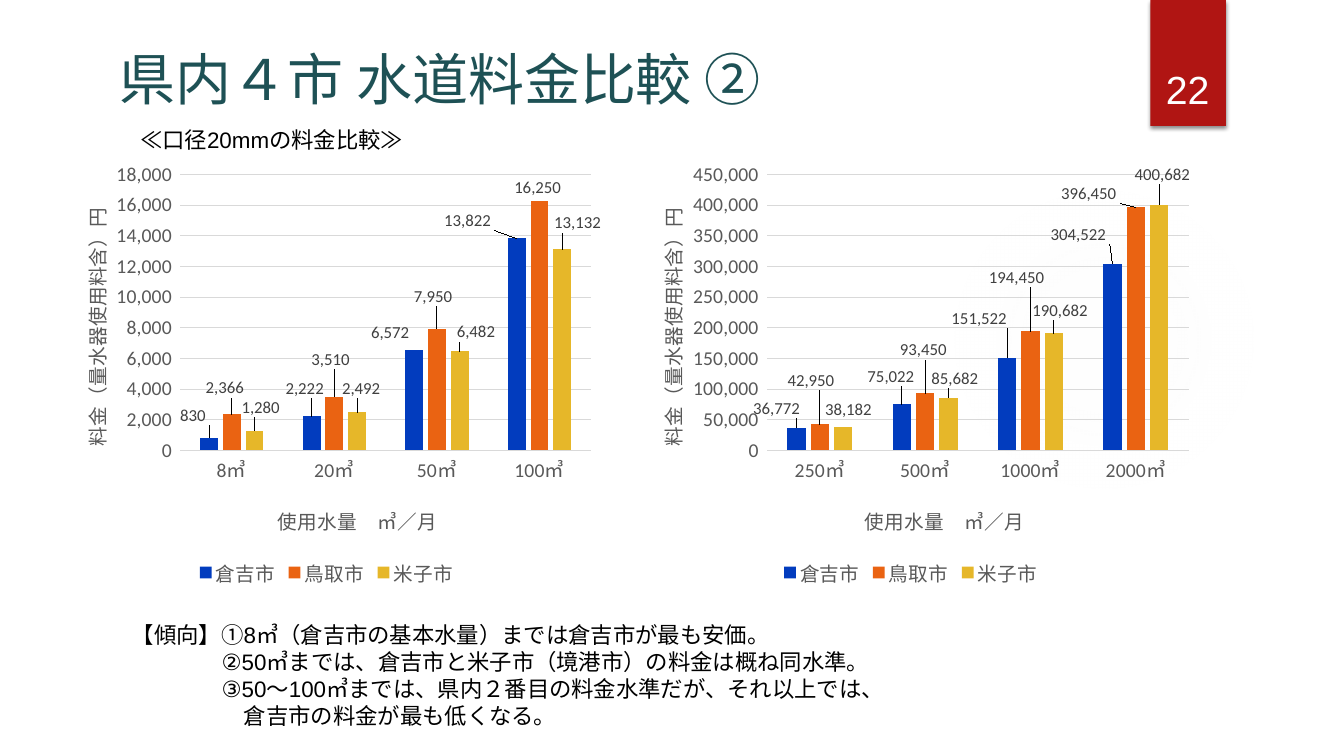
from collections import namedtuple
from dataclasses import dataclass

from pptx import Presentation
from pptx.chart.data import CategoryChartData
from pptx.dml.color import RGBColor
from pptx.enum.chart import XL_CHART_TYPE, XL_LABEL_POSITION, XL_LEGEND_POSITION, XL_TICK_MARK
from pptx.enum.shapes import MSO_SHAPE
from pptx.enum.text import MSO_ANCHOR, PP_ALIGN
from pptx.oxml import parse_xml
from pptx.oxml.ns import nsdecls, qn
from pptx.util import Inches, Pt

Box = namedtuple("Box", "left top width height")
Panel = namedtuple("Panel", "cats values nudges top step plot across up")


@dataclass(frozen=True)
class Theme:
    """Colours, fonts and type sizes of the slide."""
    title: str = "1E5155"
    ink: str = "000000"
    paper: str = "FFFFFF"
    flag: str = "B01513"
    glow: str = "F3F3F3"
    axis: str = "595959"
    label: str = "404040"
    grid: str = "D9D9D9"
    bars: tuple = ("023CBE", "EA6312", "E6B729")
    head: str = "Calibri"
    body: str = "Arial"
    big: int = 40
    page: int = 28
    text: int = 16
    tick: int = 14
    small: int = 12


THEME = Theme()
FORMAT = r"#,##0_);[Red]\(#,##0\)"
CITIES = ("倉吉市", "鳥取市", "米子市")
NOTES = (
    (0, "【傾向】①8㎥（倉吉市の基本水量）までは倉吉市が最も安価。"),
    (0.89, "②50㎥までは、倉吉市と米子市（境港市）の料金は概ね同水準。"),
    (0.89, "③50～100㎥までは、県内２番目の料金水準だが、それ以上では、"),
    (1.11, "倉吉市の料金が最も低くなる。"),
)
SMALL = Panel(
    ("8㎥", "20㎥", "50㎥", "100㎥"),
    ((830, 2222, 6572, 13822), (2366, 3510, 7950, 16250), (1280, 2492, 6482, 13132)),
    (((-0.14, -0.08), (-0.05, -0.14), (-0.22, -0.03), (-0.47, -0.04)),
     ((-0.05, -0.12), (-0.02, -0.23), (-0.02, -0.18), (0, 0)),
     ((0.08, -0.09), (0.06, -0.1), (0.18, -0.05), (0.17, -0.12))),
    18000, 2000, Box(1.32, 0.21, 4.07, 2.74), (2.25, 3.45), (0.29, 0.5))
LARGE = Panel(
    ("250㎥", "500㎥", "1000㎥", "2000㎥"),
    ((36772, 75022, 151522, 304522), (42950, 93450, 194450, 396450),
     (38182, 85682, 190682, 400682)),
    (((-0.18, -0.05), (-0.09, -0.14), (-0.26, -0.25), (-0.32, -0.15)),
     ((-0.07, -0.29), (0, -0.29), (-0.12, -0.39), (-0.45, 0)),
     ((0.07, -0.03), (0.08, -0.05), (0.08, -0.09), (0.05, -0.16))),
    450000, 50000, Box(1.43, 0.21, 4.18, 2.74), (2.36, 3.45), (0.29, 0.5))


def style(font, size, color, name):
    """Set the look of a font."""
    font.size, font.name, font.bold = Pt(size), name, False
    font.color.rgb = RGBColor.from_string(color)


def write(slide, box, lines, size, color, name, align=PP_ALIGN.LEFT):
    """Add bottom-anchored text from pairs of indent and wording."""
    frame = slide.shapes.add_textbox(*map(Inches, box)).text_frame
    frame.word_wrap = True
    frame.vertical_anchor = MSO_ANCHOR.BOTTOM
    frame.text = "\n".join(words for _, words in lines)
    for para, (indent, _) in zip(frame.paragraphs, lines):
        para.alignment = align
        if indent:
            para._p.get_or_add_pPr().set("marL", str(Inches(indent)))
        for run in para.runs:
            style(run.font, size, color, name)


def solid(slide, kind, box, color):
    """Add a filled shape with no outline."""
    shape = slide.shapes.add_shape(kind, *map(Inches, box))
    shape.shadow.inherit = False
    shape.fill.solid()
    shape.fill.fore_color.rgb = RGBColor.from_string(color)
    shape.line.fill.background()
    return shape


def glow(slide, box):
    """Add the faint round glow."""
    props = solid(slide, MSO_SHAPE.OVAL, box, THEME.glow)._element.spPr
    stops = "".join(
        f'<a:gs pos="{pos}000"><a:srgbClr val="{THEME.glow}"><a:alpha val="{alpha}000"/>'
        "</a:srgbClr></a:gs>" for pos, alpha in ((0, 7), (36, 6), (69, 0)))
    props.replace(props.find(qn("a:solidFill")), parse_xml(
        f'<a:gradFill {nsdecls("a")}><a:gsLst>{stops}</a:gsLst><a:path path="circle">'
        '<a:fillToRect l="50000" t="50000" r="50000" b="50000"/></a:path></a:gradFill>'))


def flag(slide, box, number):
    """Add the red page flag with its number."""
    shape = solid(slide, MSO_SHAPE.RECTANGLE, box, THEME.flag)
    shape._element.spPr.find(qn("a:effectLst")).append(parse_xml(
        f'<a:outerShdw {nsdecls("a")} blurRad="{Pt(3)}" dist="{Pt(2)}" dir="5400000">'
        '<a:srgbClr val="000000"><a:alpha val="45000"/></a:srgbClr></a:outerShdw>'))
    write(slide, Box(box.left - 0.09, box.top + 0.32, 0.92, 0.84), [(0, number)],
          THEME.page, THEME.paper, THEME.body, PP_ALIGN.CENTER)


def place(node, index, box, spot):
    """Give a chart part a manual layout, in inches within the chart box."""
    old = node.find(qn("c:layout"))
    if old is not None:
        node.remove(old)
    parts = [("x", spot[0] / box.width), ("y", spot[1] / box.height)]
    modes = ""
    if len(spot) == 4:
        parts += [("w", spot[2] / box.width), ("h", spot[3] / box.height)]
        modes = '<c:layoutTarget val="inner"/>'
    if node.tag != qn("c:dLbl"):
        modes += '<c:xMode val="edge"/><c:yMode val="edge"/>'
    sizes = "".join(f'<c:{key} val="{part:.4f}"/>' for key, part in parts)
    node.insert(index, parse_xml(
        f'<c:layout {nsdecls("c")}><c:manualLayout>{modes}{sizes}</c:manualLayout></c:layout>'))


def label(series, nudges, box):
    """Show values above the bars, each moved by its nudge."""
    labels = series.data_labels
    labels.show_value = True
    labels.number_format, labels.number_format_is_linked = FORMAT, False
    labels.position = XL_LABEL_POSITION.OUTSIDE_END
    style(labels.font, THEME.small, THEME.label, THEME.head)
    for index, nudge in enumerate(nudges):
        if any(nudge):
            mark = series.points[index].data_label
            style(mark.font, THEME.small, THEME.label, THEME.head)
            mark.position = XL_LABEL_POSITION.OUTSIDE_END
            place(mark._dLbl, 1, box, nudge)


def dress(axis, words, spot, box):
    """Style an axis and place its title."""
    axis.major_tick_mark = axis.minor_tick_mark = XL_TICK_MARK.NONE
    style(axis.tick_labels.font, THEME.tick, THEME.axis, THEME.head)
    frame = axis.axis_title.text_frame
    frame.text = words
    style(frame.paragraphs[0].runs[0].font, THEME.tick, THEME.axis, THEME.head)
    place(axis.axis_title._element, 1, box, spot)
    return frame


def rule(line):
    """Draw a thin grey chart line."""
    line.color.rgb = RGBColor.from_string(THEME.grid)
    line.width = Pt(0.75)


def graph(slide, box, panel):
    """Add one column chart of water charges."""
    data = CategoryChartData(number_format=FORMAT)
    data.categories = panel.cats
    for city, values in zip(CITIES, panel.values):
        data.add_series(city, values)
    chart = slide.shapes.add_chart(
        XL_CHART_TYPE.COLUMN_CLUSTERED, *map(Inches, box), data).chart
    style(chart.font, 10, THEME.ink, THEME.head)
    chart.has_title = False
    chart.has_legend = True
    chart.legend.position = XL_LEGEND_POSITION.BOTTOM
    chart.legend.include_in_layout = False
    style(chart.legend.font, THEME.tick, THEME.axis, THEME.head)

    plot = chart.plots[0]
    plot.gap_width, plot.overlap, plot.vary_by_categories = 219, -27, False
    for series, color, nudges in zip(plot.series, THEME.bars, panel.nudges):
        series.format.fill.solid()
        series.format.fill.fore_color.rgb = RGBColor.from_string(color)
        label(series, nudges, box)

    dress(chart.category_axis, "使用水量　㎥／月", panel.across, box)
    rule(chart.category_axis.format.line)
    axis = chart.value_axis
    frame = dress(axis, "料金（量水器使用料含）円", panel.up, box)
    frame._txBody.bodyPr.set("rot", "-5400000")
    frame._txBody.bodyPr.set("vert", "horz")
    axis.minimum_scale, axis.maximum_scale, axis.major_unit = 0, panel.top, panel.step
    axis.tick_labels.number_format = FORMAT
    axis.tick_labels.number_format_is_linked = False
    axis.format.line.fill.background()
    rule(axis.major_gridlines.format.line)
    place(chart._chartSpace.chart.plotArea, 0, box, panel.plot)


def main():
    """Build and save the slide."""
    deck = Presentation()
    deck.slide_width, deck.slide_height = Inches(13.33), Inches(7.5)
    slide = deck.slides.add_slide(deck.slide_layouts[6])
    glow(slide, Box(9.41, 1.83, 3.08, 3.08))
    flag(slide, Box(11.41, 0, 0.75, 1.25), "22")
    write(slide, Box(1.09, 0.32, 9.65, 0.84), [(0, "県内４市 水道料金比較 ②")],
          THEME.big, THEME.title, THEME.head)
    write(slide, Box(1.29, 1.14, 9.79, 0.43), [(0, "≪口径20mmの料金比較≫")],
          THEME.text, THEME.ink, THEME.body)
    graph(slide, Box(0.47, 1.52, 5.54, 4.34), SMALL)
    graph(slide, Box(6.18, 1.52, 5.71, 4.34), LARGE)
    write(slide, Box(1.21, 6.13, 9.79, 1.15), NOTES, THEME.text, THEME.ink, THEME.body)
    deck.save("out.pptx")


if __name__ == "__main__":
    main()
